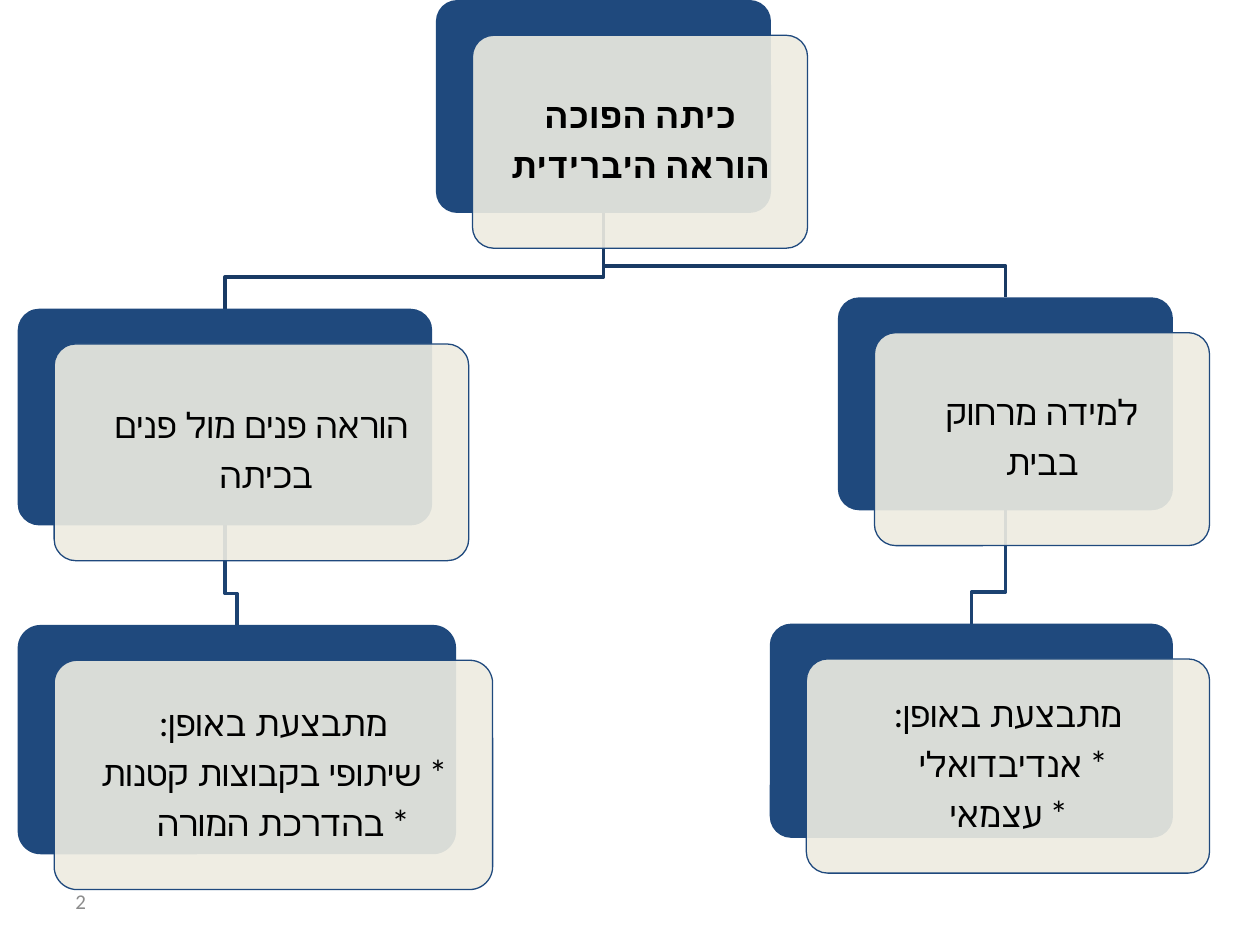
from dataclasses import dataclass

from lxml import etree
from pptx import Presentation
from pptx.dml.color import RGBColor
from pptx.enum.shapes import MSO_SHAPE
from pptx.enum.text import MSO_ANCHOR, PP_ALIGN
from pptx.oxml.ns import qn
from pptx.shapes.autoshape import Shape
from pptx.slide import Slide
from pptx.util import Inches, Pt

ROUNDED = MSO_SHAPE.ROUNDED_RECTANGLE
MIDDLE = MSO_ANCHOR.MIDDLE
CENTER = PP_ALIGN.CENTER
LEFT = PP_ALIGN.LEFT


@dataclass(frozen=True)
class Theme:
    navy: RGBColor = RGBColor(0x1F, 0x49, 0x7D)
    cream: RGBColor = RGBColor(0xEE, 0xEC, 0xE1)
    cream_alpha: int = 90
    text: RGBColor = RGBColor(0, 0, 0)
    muted: RGBColor = RGBColor(0x8C, 0x8C, 0x8C)
    upper_line: RGBColor = RGBColor(0x19, 0x3A, 0x64)
    lower_line: RGBColor = RGBColor(0x1C, 0x42, 0x71)
    card_font: str = "Lato"
    number_font: str = "Calibri"
    card_size: int = 20
    number_size: int = 12


@dataclass(frozen=True)
class Card:
    left: float
    top: float
    width: float
    height: float
    lines: tuple[str, ...]
    bold: bool = False

    @property
    def center(self) -> float:
        return self.left + self.width / 2

    @property
    def bottom(self) -> float:
        return self.top + self.height


@dataclass(frozen=True)
class Link:
    parent: Card
    child: Card
    color: RGBColor


THEME = Theme()
CARD_OFFSET = (0.29, 0.28)
CARD_INSET = 0.13
BEND_ABOVE_CHILD = 0.25

CLASSROOM = Card(3.46, 0, 2.66, 1.69, ("כיתה הפוכה", "הוראה היברידית"), bold=True)
IN_PERSON = Card(0.14, 2.45, 3.29, 1.72, ("הוראה פנים מול פנים", "בכיתה "))
IN_PERSON_MODES = Card(
    0.14, 4.96, 3.48, 1.82,
    ("מתבצעת באופן:", "* שיתופי בקבוצות קטנות", "* בהדרכת המורה  "),
)
REMOTE = Card(6.65, 2.36, 2.66, 1.69, ("למידה מרחוק", "בבית"))
REMOTE_MODES = Card(
    6.11, 4.95, 3.2, 1.7, ("מתבצעת באופן:", "* אנדיבדואלי ", "* עצמאי")
)
CARDS = (CLASSROOM, IN_PERSON, IN_PERSON_MODES, REMOTE, REMOTE_MODES)
LINKS = (
    Link(REMOTE, REMOTE_MODES, THEME.lower_line),
    Link(CLASSROOM, REMOTE, THEME.upper_line),
    Link(IN_PERSON, IN_PERSON_MODES, THEME.lower_line),
    Link(CLASSROOM, IN_PERSON, THEME.upper_line),
)


def draw_link(slide: Slide, link: Link) -> None:
    parent, child = link.parent, link.child
    bend = child.top - BEND_ABOVE_CHILD
    corners = [
        (Inches(x), Inches(y))
        for x, y in (
            (parent.center, parent.bottom),
            (parent.center, bend),
            (child.center, bend),
            (child.center, child.top),
        )
    ]
    builder = slide.shapes.build_freeform(*corners[0])
    builder.add_line_segments(corners[1:], close=False)
    elbow = builder.convert_to_shape()
    elbow.shadow.inherit = False
    elbow.fill.background()
    elbow.line.color.rgb = link.color
    elbow.line.width = Pt(2)


def draw_panel(slide: Slide, card: Card, shift: tuple[float, float], fill: RGBColor) -> Shape:
    panel = slide.shapes.add_shape(
        ROUNDED,
        Inches(card.left + shift[0]),
        Inches(card.top + shift[1]),
        Inches(card.width),
        Inches(card.height),
    )
    panel.adjustments[0] = 0.1
    panel.shadow.inherit = False
    panel.fill.solid()
    panel.fill.fore_color.rgb = fill
    panel.line.fill.background()
    return panel


def write_lines(panel: Shape, card: Card) -> None:
    frame = panel.text_frame
    frame.text = "\n".join(card.lines)
    frame.word_wrap = True
    frame.vertical_anchor = MIDDLE
    frame.margin_left = frame.margin_right = Inches(CARD_INSET)
    frame.margin_top = frame.margin_bottom = Inches(CARD_INSET)
    for paragraph in frame.paragraphs:
        paragraph.alignment = CENTER
        paragraph.line_spacing = 0.9
        paragraph.space_after = Pt(7)
        paragraph._p.get_or_add_pPr().set("rtl", "1")
        for run in paragraph.runs:
            run.font.name = THEME.card_font
            run.font.size = Pt(THEME.card_size)
            run.font.bold = card.bold
            run.font.color.rgb = THEME.text
            script_font = etree.SubElement(run._r.get_or_add_rPr(), qn("a:cs"))
            script_font.set("typeface", THEME.card_font)


def draw_card(slide: Slide, card: Card) -> None:
    draw_panel(slide, card, (0, 0), THEME.navy)
    front = draw_panel(slide, card, CARD_OFFSET, THEME.cream)
    color = front._element.spPr.find(qn("a:solidFill")).find(qn("a:srgbClr"))
    etree.SubElement(color, qn("a:alpha")).set("val", str(THEME.cream_alpha * 1000))
    front.line.color.rgb = THEME.navy
    front.line.width = Pt(0.75)
    write_lines(front, card)


def draw_slide_number(slide: Slide, number: str) -> None:
    box = slide.shapes.add_textbox(Inches(0.5), Inches(6.95), Inches(2.33), Inches(0.4))
    frame = box.text_frame
    frame.text = number
    frame.word_wrap = True
    frame.vertical_anchor = MIDDLE
    paragraph = frame.paragraphs[0]
    paragraph.alignment = LEFT
    font = paragraph.runs[0].font
    font.name = THEME.number_font
    font.size = Pt(THEME.number_size)
    font.color.rgb = THEME.muted


def main() -> None:
    """Build the flipped-classroom hierarchy slide."""
    presentation = Presentation()
    presentation.slide_width = Inches(10)
    presentation.slide_height = Inches(7.5)
    slide = presentation.slides.add_slide(presentation.slide_layouts[6])
    for link in LINKS:
        draw_link(slide, link)
    for card in CARDS:
        draw_card(slide, card)
    draw_slide_number(slide, "2")
    presentation.save("out.pptx")


if __name__ == "__main__":
    main()
